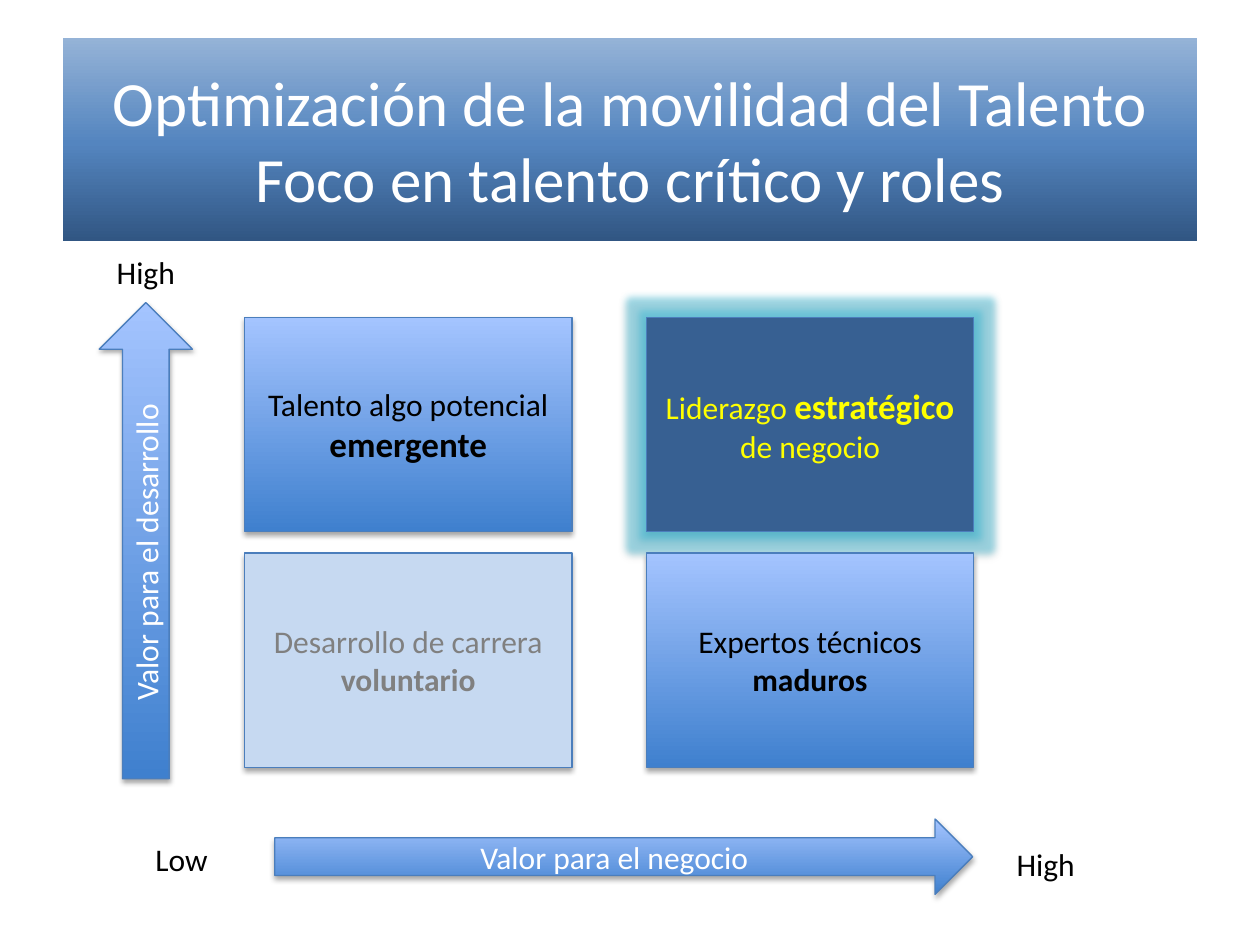
from dataclasses import dataclass

from pptx import Presentation
from pptx.dml.color import RGBColor
from pptx.enum.shapes import MSO_SHAPE as SHAPE
from pptx.enum.text import MSO_ANCHOR as ANCHOR, MSO_AUTO_SIZE as AUTO, PP_ALIGN as ALIGN
from pptx.oxml.ns import qn
from pptx.util import Cm, Pt
from lxml.etree import SubElement


@dataclass(frozen=True)
class Theme:
    font: str = "Calibri"
    title_size: int = 36
    body_size: int = 18
    strong_size: int = 20
    white: str = "FFFFFF"
    black: str = "000000"
    muted: str = "808080"
    accent: str = "FFFF00"
    pale: str = "C6D9F1"
    dark: str = "376092"
    line: str = "4B7EBC"
    glow: str = "35BEDD"
    title_grad: tuple = ((0, "315683"), (48, "5485BF"), (100, "95B3D7"))
    blue_grad: tuple = ((0, "3F80CE"), (100, "A4C4FF"))


T = Theme()


def add_color(parent, color, alpha=100):
    clr = SubElement(parent, qn("a:srgbClr"), val=color)
    if alpha < 100:
        SubElement(clr, qn("a:alpha"), val=str(alpha * 1000))


def set_fill(sp, fill):
    """Fill with one colour, or with gradient stops running from the bottom up."""
    if isinstance(fill, str):
        sp.fill.solid()
        sp.fill.fore_color.rgb = RGBColor.from_string(fill)
        return
    sp.fill.gradient()
    sp.fill.gradient_angle = 90
    stops = sp.element.spPr.find(".//" + qn("a:gsLst"))
    for stop in list(stops):
        stops.remove(stop)
    for pos, color in fill:
        add_color(SubElement(stops, qn("a:gs"), pos=str(pos * 1000)), color)


def add_effects(sp, glow=None):
    effects = sp.element.spPr.find(qn("a:effectLst"))
    if glow:
        add_color(SubElement(effects, qn("a:glow"), rad=str(Pt(8))), glow, 40)
    shadow = SubElement(effects, qn("a:outerShdw"), blurRad=str(Pt(3.1)),
                        dist=str(Pt(1.8)), dir="5400000", rotWithShape="0")
    add_color(shadow, T.black, 35)


def write(tf, *parts, color=T.black, size=T.body_size, strong_size=None):
    """Write centred text; every second part is bold, a newline breaks the line."""
    tf.word_wrap = True
    tf.auto_size = AUTO.NONE
    tf.vertical_anchor = ANCHOR.MIDDLE
    p = tf.paragraphs[0]
    p.alignment = ALIGN.CENTER
    for i, part in enumerate(parts):
        for j, text in enumerate(part.split("\n")):
            if j:
                p.add_line_break()
            r = p.add_run()
            r.text = text
            r.font.name = T.font
            r.font.bold = i % 2 == 1
            r.font.size = Pt(strong_size if i % 2 and strong_size else size)
            r.font.color.rgb = RGBColor.from_string(color)


def add_block(slide, kind, box, fill, *parts, outlined=True, glow=None, **fmt):
    sp = slide.shapes.add_shape(kind, *map(Cm, box))
    sp.shadow.inherit = False
    set_fill(sp, fill)
    if outlined:
        sp.line.color.rgb = RGBColor.from_string(T.line)
        sp.line.width = Pt(0.75)
        add_effects(sp, glow)
    else:
        sp.line.fill.background()
    write(sp.text_frame, *parts, **fmt)
    return sp


def build_title(slide, box):
    sp = slide.shapes.title
    sp.left, sp.top, sp.width, sp.height = map(Cm, box)
    set_fill(sp, T.title_grad)
    write(sp.text_frame, "Optimización de la movilidad del Talento\n"
          "Foco en talento crítico y roles", color=T.white, size=T.title_size)


def build_matrix(slide, box):
    """Two by two talent matrix, with cells in the corners of the box."""
    x, y, w, h = box
    cell_w, cell_h = 6.6, 4.32
    cells = [
        (T.blue_grad, ("Talento algo potencial ", "emergente"),
         dict(strong_size=T.strong_size)),
        (T.dark, ("Liderazgo ", "estratégico", " de negocio"),
         dict(color=T.accent, strong_size=T.strong_size, glow=T.glow)),
        (T.pale, ("Desarrollo de carrera ", "voluntario"), dict(color=T.muted)),
        (T.blue_grad, ("Expertos técnicos ", "maduros"), {}),
    ]
    for i, (fill, parts, fmt) in enumerate(cells):
        row, col = divmod(i, 2)
        place = (x + col * (w - cell_w), y + row * (h - cell_h), cell_w, cell_h)
        add_block(slide, SHAPE.RECTANGLE, place, fill, *parts, **fmt)


def add_label(slide, x, y, text):
    add_block(slide, SHAPE.ROUNDED_RECTANGLE, (x, y, 1.88, 0.81), T.white, text,
              outlined=False)


def build_development_axis(slide, box):
    x, y, w, h = box
    sp = add_block(slide, SHAPE.UP_ARROW, box, T.blue_grad,
                   "Valor para el desarrollo", color=T.white)
    sp.text_frame._txBody.bodyPr.set("vert", "vert270")
    add_label(slide, x, y - 1.02, "High")


def build_business_axis(slide, box):
    x, y, w, h = box
    add_block(slide, SHAPE.RIGHT_ARROW, box, T.blue_grad,
              "Valor para el negocio", color=T.white)
    add_label(slide, x + w + 0.53, y + 0.51, "High")
    add_label(slide, x - 2.82, y + 0.41, "Low")


def main():
    prs = Presentation()
    prs.slide_width, prs.slide_height = Cm(25.4), Cm(19.05)
    slide = prs.slides.add_slide(prs.slide_layouts[5])
    build_title(slide, (1.27, 0.76, 22.86, 4.09))
    build_matrix(slide, (4.93, 6.4, 14.7, 9.07))
    build_development_axis(slide, (2.0, 6.1, 1.88, 9.6))
    build_business_axis(slide, (5.54, 16.51, 14.07, 1.52))
    prs.save("out.pptx")


if __name__ == "__main__":
    main()
